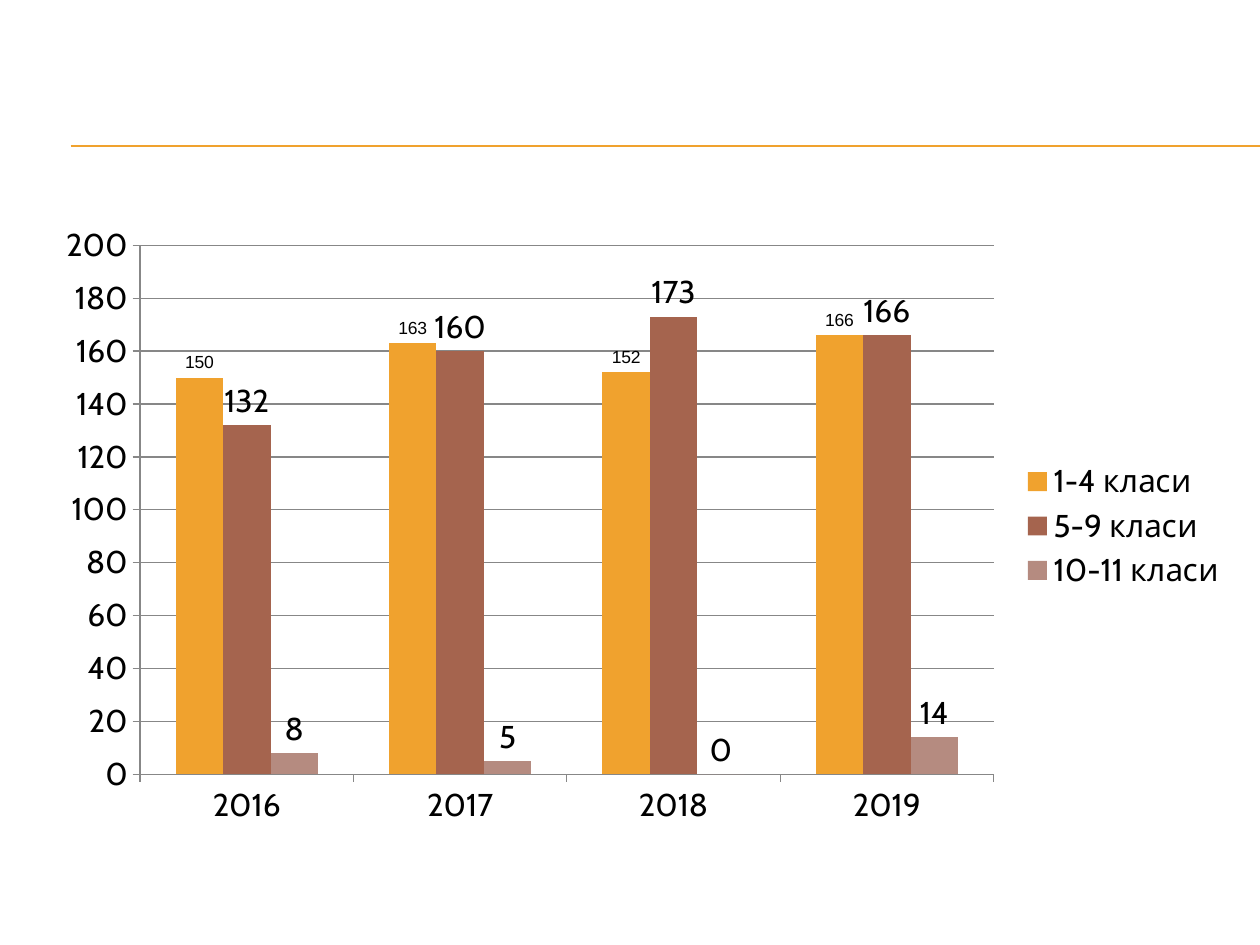
from lxml import etree
from pptx import Presentation
from pptx.chart.data import CategoryChartData
from pptx.dml.color import RGBColor
from pptx.enum import chart as ce, shapes
from pptx.oxml import parse_xml
from pptx.oxml.ns import nsdecls, qn
from pptx.util import Pt

# Content
YEARS = ["2016", "2017", "2018", "2019"]
# name, values, colour, label format
SERIES = [
    ("1-4 класи", (150, 163, 152, 166), "F0A22E", {"name": "Arial", "size": Pt(10)}),
    ("5-9 класи", (132, 160, 173, 166), "A5644E", {"name": "Cabin", "size": Pt(18)}),
    ("10-11 класи", (8, 5, 0, 14), "B58B80", {"name": "Cabin", "size": Pt(18)}),
]
RULES = [83, 83.5]  # heights of the two header lines
BOX = (24, 122.4, 684, 356.4)
PLOT = {"x": 0.082, "y": 0.05, "w": 0.713, "h": 0.848}  # shares of the chart box
GREY = "878787"


def paint(color, code):
    color.rgb = RGBColor.from_string(code)


def stroke(line, code):
    paint(line.color, code)
    line.width = Pt(0.75)


def style(obj, vals):
    for key, val in vals.items():
        setattr(obj, key, val)


deck = Presentation()
style(deck, {"slide_width": Pt(720), "slide_height": Pt(540)})
slide = deck.slides.add_slide(deck.slide_layouts[6])

# Header lines
for y in RULES:
    rule = slide.shapes.add_connector(
        shapes.MSO_CONNECTOR.STRAIGHT, Pt(40.5), Pt(y), Pt(720), Pt(y))
    stroke(rule.line, "F0A22E")
    etree.SubElement(rule._element.spPr, qn("a:effectLst"))

# Chart
data = CategoryChartData()
data.categories = YEARS
for name, vals, _, _ in SERIES:
    data.add_series(name, vals)
chart = slide.shapes.add_chart(
    ce.XL_CHART_TYPE.COLUMN_CLUSTERED, *map(Pt, BOX), data).chart
style(chart, {"has_title": False, "has_legend": True})
style(chart.font, {"name": "Cabin", "size": Pt(18)})
paint(chart.font.color, "000000")
style(chart.legend, {"position": ce.XL_LEGEND_POSITION.RIGHT,
                     "include_in_layout": False})

# Axes
for axis in (chart.category_axis, chart.value_axis):
    axis.major_tick_mark = ce.XL_TICK_MARK.OUTSIDE
    stroke(axis.format.line, GREY)
style(chart.value_axis, {"minimum_scale": 0, "maximum_scale": 200,
                         "major_unit": 20, "has_major_gridlines": True})
stroke(chart.value_axis.major_gridlines.format.line, GREY)

# Columns and their labels
plot = chart.plots[0]
style(plot, {"gap_width": 150, "overlap": 0, "vary_by_categories": False})
for ser, (_, _, code, font) in zip(plot.series, SERIES):
    ser.format.fill.solid()
    paint(ser.format.fill.fore_color, code)
    tags = ser.data_labels
    style(tags, {"show_value": True,
                 "position": ce.XL_LABEL_POSITION.OUTSIDE_END})
    style(tags.font, font)
    paint(tags.font.color, "000000")

# Fixed plot area
area = chart._chartSpace.chart.plotArea
for old in area.findall(qn("c:layout")):
    area.remove(old)
parts = '<c:layoutTarget val="inner"/>'
parts += "".join(f'<c:{k}Mode val="edge"/>' for k in "xy")
parts += "".join(f'<c:{k} val="{v}"/>' for k, v in PLOT.items())
area.insert(0, parse_xml(
    f'<c:layout {nsdecls("c")}><c:manualLayout>{parts}</c:manualLayout></c:layout>'))

deck.save("out.pptx")
